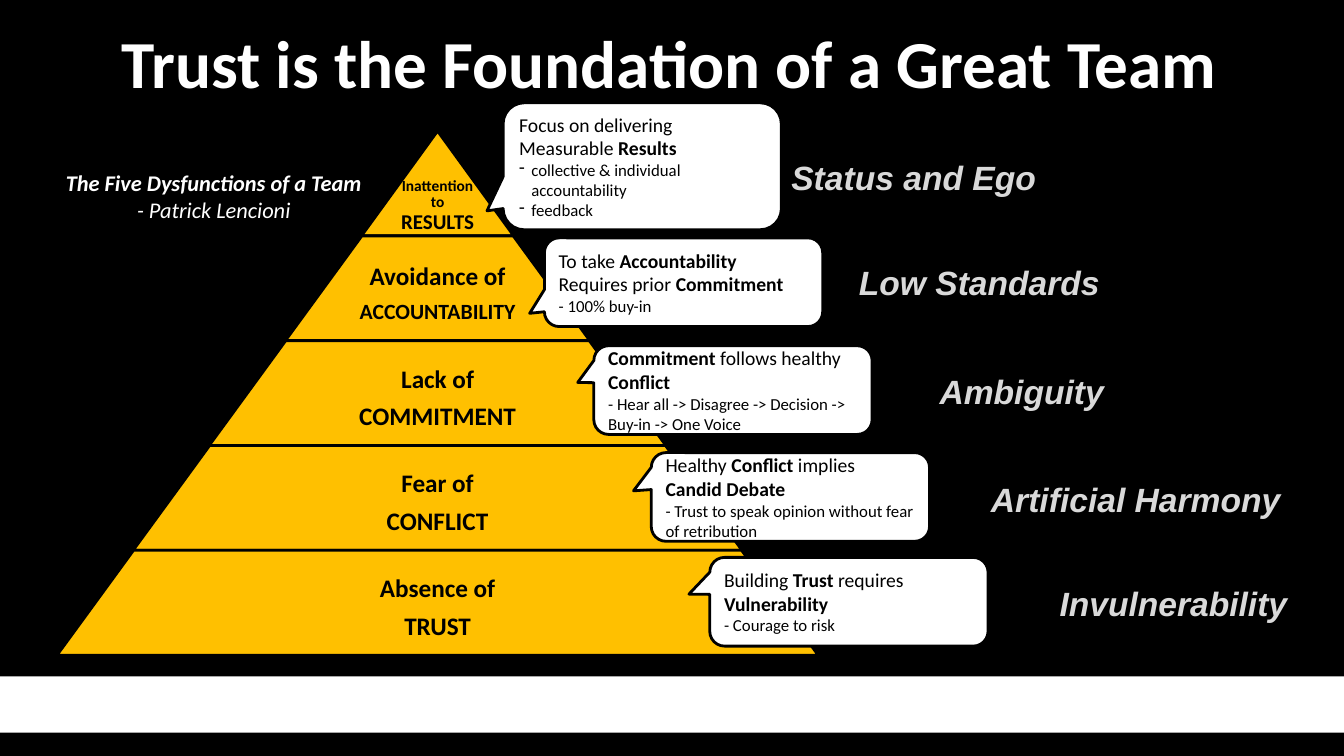
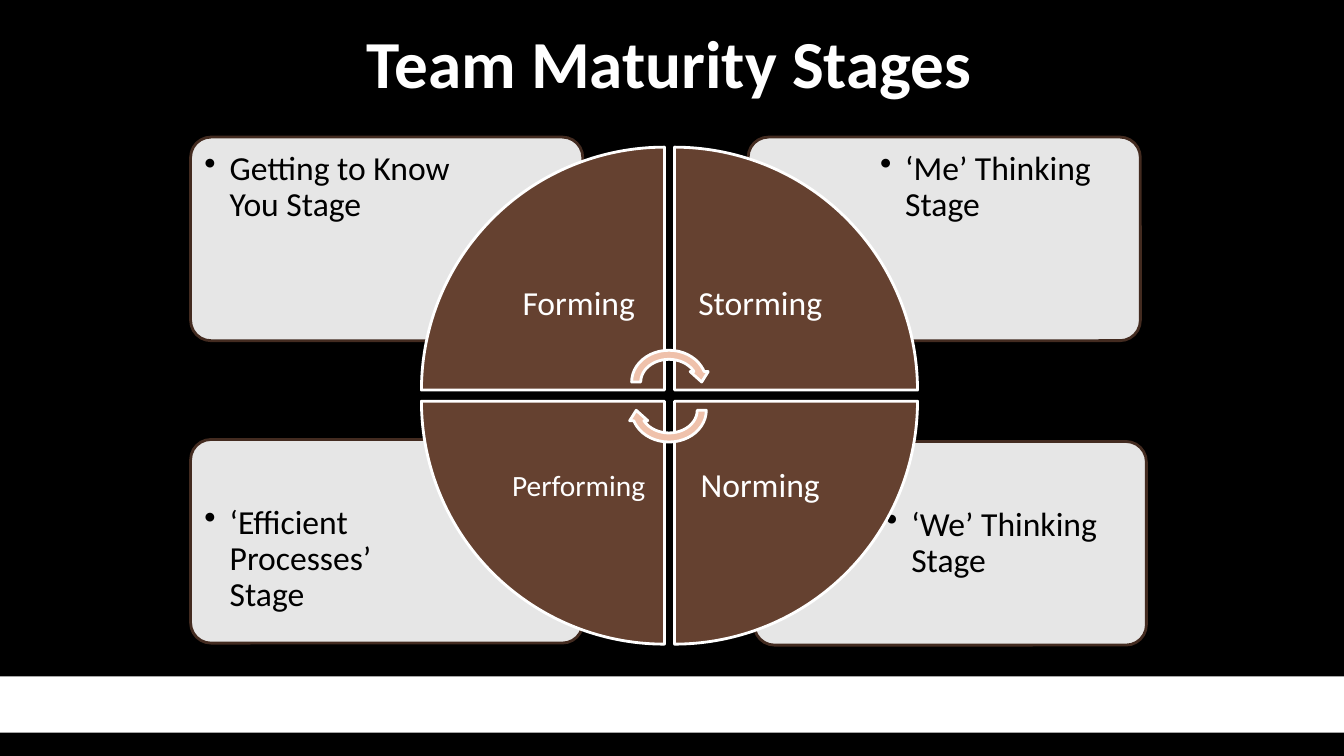
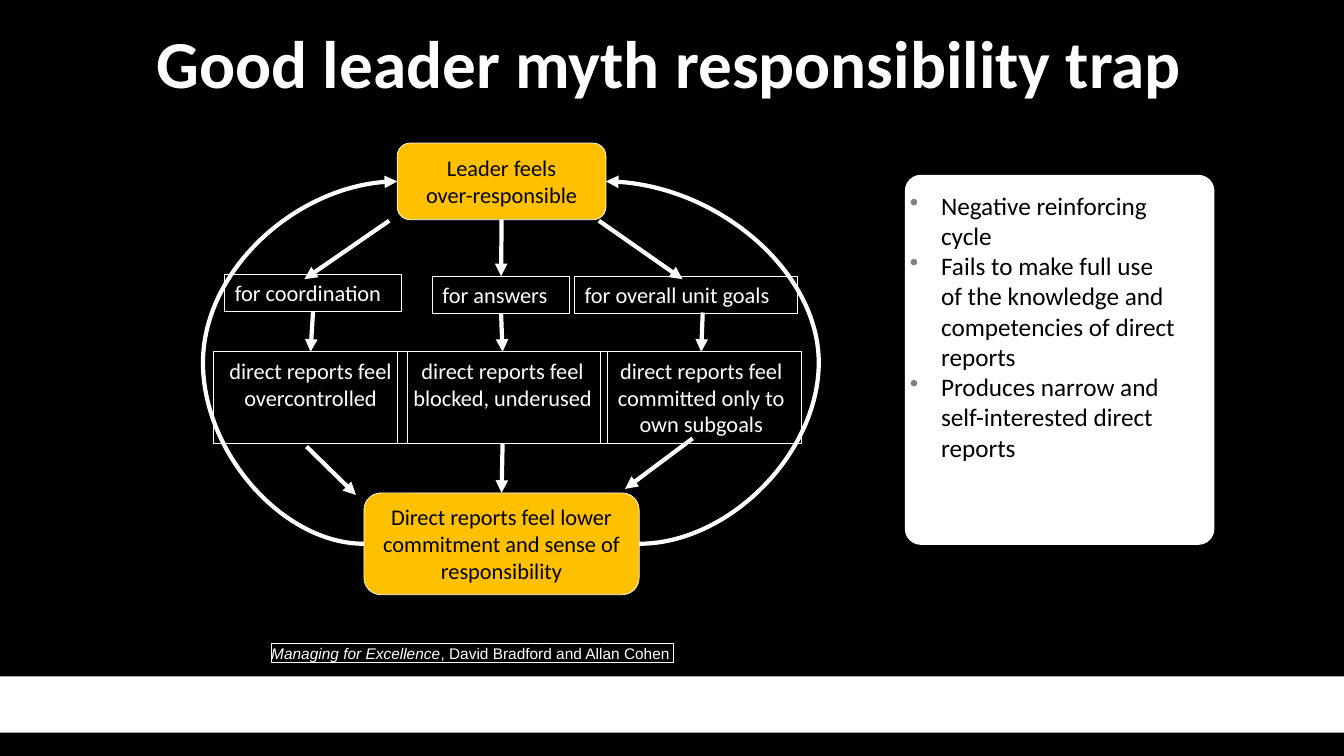
from lxml.etree import SubElement
from pptx import Presentation
from pptx.dml.color import RGBColor
from pptx.enum.shapes import MSO_CONNECTOR, MSO_SHAPE
from pptx.enum.text import MSO_ANCHOR, PP_ALIGN
from pptx.oxml.ns import qn
from pptx.util import Inches, Pt

BLACK, WHITE, GOLD = "000000", "FFFFFF", "FFC000"
BROWN, DARK_BROWN, PEACH = "654130", "432B20", "EFC1AB"
SILVER, GREY = "D9D9D9", "808080"
LEFT, CENTER = PP_ALIGN.LEFT, PP_ALIGN.CENTER
TOP, MIDDLE, BOTTOM = MSO_ANCHOR.TOP, MSO_ANCHOR.MIDDLE, MSO_ANCHOR.BOTTOM
INSETS = (0.1, 0.05, 0.1, 0.05)


def rgb(value):
    return RGBColor.from_string(value)


def is_point(end):
    return isinstance(end[0], (int, float))


class Deck:
    font = "Calibri"

    def __init__(self):
        self.prs = Presentation()
        self.prs.slide_width = Inches(13.33)
        self.prs.slide_height = Inches(7.5)
        self.s = None

    def slide(self, title):
        self.s = self.prs.slides.add_slide(self.prs.slide_layouts[6])
        self.s.background.fill.solid()
        self.s.background.fill.fore_color.rgb = rgb(BLACK)
        self.shape(MSO_SHAPE.RECTANGLE, (0, 6.71, 13.33, 0.56), WHITE)
        self.text((0.57, 0.18, 12.14, 0.96), [(title, 48)], anchor=MIDDLE,
                  align=CENTER, bold=True, insets=(0, 0, 0, 0), spacing=0.9)

    def shape(self, kind, at, fill=None, line=None, width=2, adj=(), rotation=0, alpha=None):
        sp = self.s.shapes.add_shape(kind, *map(Inches, at))
        sp.shadow.inherit = False
        sp.rotation = rotation
        for i, value in enumerate(adj):
            sp.adjustments[i] = value
        if fill:
            sp.fill.solid()
            sp.fill.fore_color.rgb = rgb(fill)
        else:
            sp.fill.background()
        if alpha:
            color = sp._element.spPr.find(qn("a:solidFill"))[0]
            SubElement(color, qn("a:alpha")).set("val", str(alpha * 1000))
        if line:
            sp.line.color.rgb = rgb(line)
            sp.line.width = Pt(width)
        else:
            sp.line.fill.background()
        return sp

    def text(self, at, lines, **style):
        sp = self.s.shapes.add_textbox(*map(Inches, at))
        return self.label(sp, lines, **style)

    def label(self, sp, lines, color=WHITE, font=None, anchor=TOP, align=LEFT, bold=False,
              italic=False, mark="bold", insets=INSETS, wrap=True, spacing=None,
              indent=0, bullet_color=None):
        tf = sp.text_frame
        tf.word_wrap = wrap
        tf.vertical_anchor = anchor
        tf.margin_left, tf.margin_top, tf.margin_right, tf.margin_bottom = map(Inches, insets)
        for i, (line, size, *bullet) in enumerate(lines):
            p = tf.add_paragraph() if i else tf.paragraphs[0]
            p.alignment = align
            if spacing:
                p.line_spacing = spacing
            if bullet:
                self.bullet(p, bullet[0], indent, bullet_color)
            for j, part in enumerate(line.split("*")):
                marked = mark if j % 2 else None
                for k, piece in enumerate(part.split("\n")):
                    if k:
                        p.add_line_break()
                    if not piece:
                        continue
                    r = p.add_run()
                    r.text = piece
                    r.font.name = font or self.font
                    r.font.size = Pt(size)
                    r.font.color.rgb = rgb(color)
                    r.font.bold = bold or marked == "bold"
                    r.font.italic = italic or marked == "italic"
        return sp

    def bullet(self, p, char, indent, color):
        pPr = p._p.get_or_add_pPr()
        pPr.set("marL", str(Inches(indent)))
        pPr.set("indent", str(-Inches(indent)))
        if color:
            SubElement(SubElement(pPr, qn("a:buClr")), qn("a:srgbClr")).set("val", color)
        SubElement(pPr, qn("a:buChar")).set("char", char)

    def arrow(self, start, end, adj=None):
        ends = []
        for point in (start, end):
            ends += map(Inches, point if is_point(point) else (0, 0))
        kind = MSO_CONNECTOR.STRAIGHT if adj is None else MSO_CONNECTOR.CURVE
        cxn = self.s.shapes.add_connector(kind, *ends)
        for point, join in ((start, cxn.begin_connect), (end, cxn.end_connect)):
            if not is_point(point):
                join(*point)
        cxn.line.color.rgb = rgb(WHITE)
        cxn.line.width = Pt(3)
        spPr = cxn._element.spPr
        SubElement(spPr.find(qn("a:ln")), qn("a:tailEnd")).set("type", "triangle")
        SubElement(spPr, qn("a:effectLst"))
        if adj is not None:
            gd = SubElement(spPr.find(qn("a:prstGeom")).find(qn("a:avLst")), qn("a:gd"))
            gd.set("name", "adj1")
            gd.set("fmla", f"val {round(adj * 100000)}")


def trust_slide(deck):
    deck.slide("Trust is the Foundation of a Great Team")
    deck.text((0.53, 1.63, 3.18, 0.64),
              [("*The Five Dysfunctions of a Team*", 16), ("- Patrick Lencioni", 16)],
              align=CENTER, italic=True, wrap=False)

    symptoms = [("Status and Ego", 7.75, 1.51, 2.65), ("Low Standards", 8.42, 2.55, 2.61),
                ("Ambiguity", 9.22, 3.63, 1.85), ("Artificial Harmony", 9.73, 4.7, 3.1),
                ("Invulnerability", 10.41, 5.73, 2.48)]
    for symptom, x, y, w in symptoms:
        deck.text((x, y, w, 0.5), [(symptom, 24)], color=SILVER, font="Arial",
                  bold=True, italic=True, wrap=False)

    tiers = [[("Inattention", 11), ("to", 11), ("RESULTS", 15)],
             [("Avoidance of", 18), ("ACCOUNTABILITY", 15.5)],
             [("Lack of", 18), ("COMMITMENT", 18)],
             [("Fear of", 18), ("CONFLICT", 18)],
             [("Absence of", 18), ("TRUST", 18)]]
    middle, step, height = 4.34, 1.51, 1.04
    for i, lines in enumerate(tiers):
        y, w = 1.3 + i * height, step * (i + 1)
        deck.shape(MSO_SHAPE.TRAPEZOID, (middle - w / 2, y, w, height), GOLD, BLACK, adj=[0.73])
        text_w = w * 0.65 if i else w
        deck.text((middle - text_w / 2, y, text_w, height), lines, color=BLACK, bold=True,
                  align=CENTER, anchor=MIDDLE if i else BOTTOM,
                  insets=(0.02,) * 4, spacing=1.25 if i else 0.9)

    callouts = [
        (7.04, 5.53, 0.88, -0.575, -0.086,
         [("Building *Trust* requires *Vulnerability*", 14), ("- Courage to risk", 12)]),
        (6.46, 4.49, 0.88, -0.564, -0.069,
         [("Healthy *Conflict* implies *Candid Debate*", 14),
          ("- Trust to speak opinion without fear of retribution", 12)]),
        (5.89, 3.43, 0.88, -0.558, -0.086,
         [("*Commitment* follows healthy *Conflict*", 14),
          ("- Hear all -> Disagree -> Decision -> Buy-in -> One Voice", 12)]),
        (5.4, 2.36, 0.88, -0.553, 0.351,
         [("To take *Accountability*", 14), ("Requires prior *Commitment*", 14),
          ("- 100% buy-in", 12)]),
        (4.99, 1.02, 1.26, -0.558, 0.351,
         [("Focus on delivering", 14), ("Measurable *Results*", 14),
          ("collective & individual accountability", 12, "-"), ("feedback", 12, "-")]),
    ]
    for x, y, h, tip_x, tip_y, lines in callouts:
        sp = deck.shape(MSO_SHAPE.ROUNDED_RECTANGULAR_CALLOUT, (x, y, 2.76, h),
                        WHITE, BLACK, adj=[tip_x, tip_y])
        deck.label(sp, lines, color=BLACK, anchor=MIDDLE, indent=0.12)


def stages_slide(deck):
    deck.slide("Team Maturity Stages")
    cards = [("‘We’ Thinking Stage", 7.48, 4.38, 1.21, 0.55),
             ("‘Efficient Processes’ Stage", 1.89, 4.36, 0.04, 0.55),
             ("‘Me’ Thinking Stage", 7.42, 1.36, 1.21, 0.04),
             ("Getting to Know You Stage", 1.89, 1.36, 0.04, 0.04)]
    for stage, x, y, dx, dy in cards:
        deck.shape(MSO_SHAPE.ROUNDED_RECTANGLE, (x, y, 3.89, 2.02), WHITE, DARK_BROWN,
                   adj=[0.1], alpha=90)
        deck.text((x + dx, y + dy, 2.63, 1.43), [(stage, 24, "•")], color=BLACK,
                  insets=(0.1,) * 4, spacing=0.9, indent=0.25)

    radius, side = 2.41, 1.7
    inward = radius - side
    wedges = [("Forming", 24, 0, 0), ("Storming", 24, 1, 0),
              ("Norming", 24, 1, 1), ("Performing", 21, 0, 1)]
    for i, (name, size, col, row) in enumerate(wedges):
        x, y = (4.18, 6.69)[col], (1.46, 3.98)[row]
        deck.shape(MSO_SHAPE.PIE_WEDGE, (x, y, radius, radius), BROWN, WHITE, rotation=90 * i)
        deck.text((x + inward * (1 - col), y + inward * (1 - row), side, side),
                  [(name, size)], align=CENTER, anchor=MIDDLE, insets=(0.16,) * 4, spacing=0.9)
    for y, rotation in ((3.43, 0), (3.71, 180)):
        deck.shape(MSO_SHAPE.CIRCULAR_ARROW, (6.22, y, 0.83, 0.72), PEACH, WHITE,
                   rotation=rotation)


def trap_slide(deck):
    deck.slide("Good leader myth responsibility trap")
    sp = deck.shape(MSO_SHAPE.ROUNDED_RECTANGLE, (8.98, 1.74, 3.06, 3.66), WHITE, WHITE,
                    0.75, adj=[0.05])
    deck.label(sp, [("Negative reinforcing cycle", 18, "•"),
                    ("Fails to make full use\nof the knowledge and competencies of direct reports",
                     18, "•"),
                    ("Produces narrow and self-interested direct reports", 18, "•")],
               color=BLACK, insets=(0, 0.1, 0.1, 0.05), indent=0.31, bullet_color=GREY)

    def state(at, *lines):
        sp = deck.shape(MSO_SHAPE.ROUNDED_RECTANGLE, at, GOLD, WHITE, 0.5)
        return deck.label(sp, [(line, 16) for line in lines], color=BLACK,
                          anchor=MIDDLE, align=CENTER)

    def frame(at, line, **style):
        sp = deck.shape(MSO_SHAPE.RECTANGLE, at, None, WHITE, 0.75)
        return deck.label(sp, [(line, 16)], **style)

    leader = state((3.94, 1.42, 2.07, 0.76), "Leader feels", "over-responsible")
    lower = state((3.61, 4.89, 2.73, 1.01),
                  "Direct reports feel lower commitment and sense of responsibility")
    duties = [frame((x, y, w, 0.37), line, wrap=False) for line, x, y, w in (
        ("for coordination", 2.23, 2.72, 1.75), ("for answers", 4.29, 2.74, 1.36),
        ("for overall unit goals", 5.7, 2.74, 2.21))]
    effects = [frame((x, 3.49, w, 0.91), f"direct reports feel {line}", align=CENTER)
               for line, x, w in (("overcontrolled", 2.12, 1.92),
                                  ("blocked, underused", 3.94, 2.09),
                                  ("committed only to own subgoals", 5.96, 1.99))]

    arrows = [((leader, 2), (duties[1], 0)), ((3.86, 2.19), (3.02, 2.77)),
              ((5.94, 2.19), (6.77, 2.77)), ((duties[0], 2), (effects[0], 0)),
              ((duties[1], 2), (effects[1], 0)), ((6.97, 3.1), (effects[2], 0)),
              ((effects[1], 2), (lower, 0)), ((6.87, 4.35), (6.2, 4.85)),
              ((3.04, 4.43), (3.53, 4.91))]
    for start, end in arrows:
        deck.arrow(start, end)
    for side, adj in ((3, -5.4), (1, -4.84)):
        deck.arrow((lower, side), (leader, side), adj)

    sp = deck.shape(MSO_SHAPE.RECTANGLE, (2.69, 6.38, 3.99, 0.19), None, WHITE, 0.75)
    deck.label(sp, [("*Managing for Excellence*, David Bradford and Allan Cohen", 11)],
               font="Arial", mark="italic", anchor=BOTTOM, insets=(0, 0, 0, 0), wrap=False)


def main():
    deck = Deck()
    trust_slide(deck)
    stages_slide(deck)
    trap_slide(deck)
    deck.prs.save("out.pptx")


if __name__ == "__main__":
    main()
